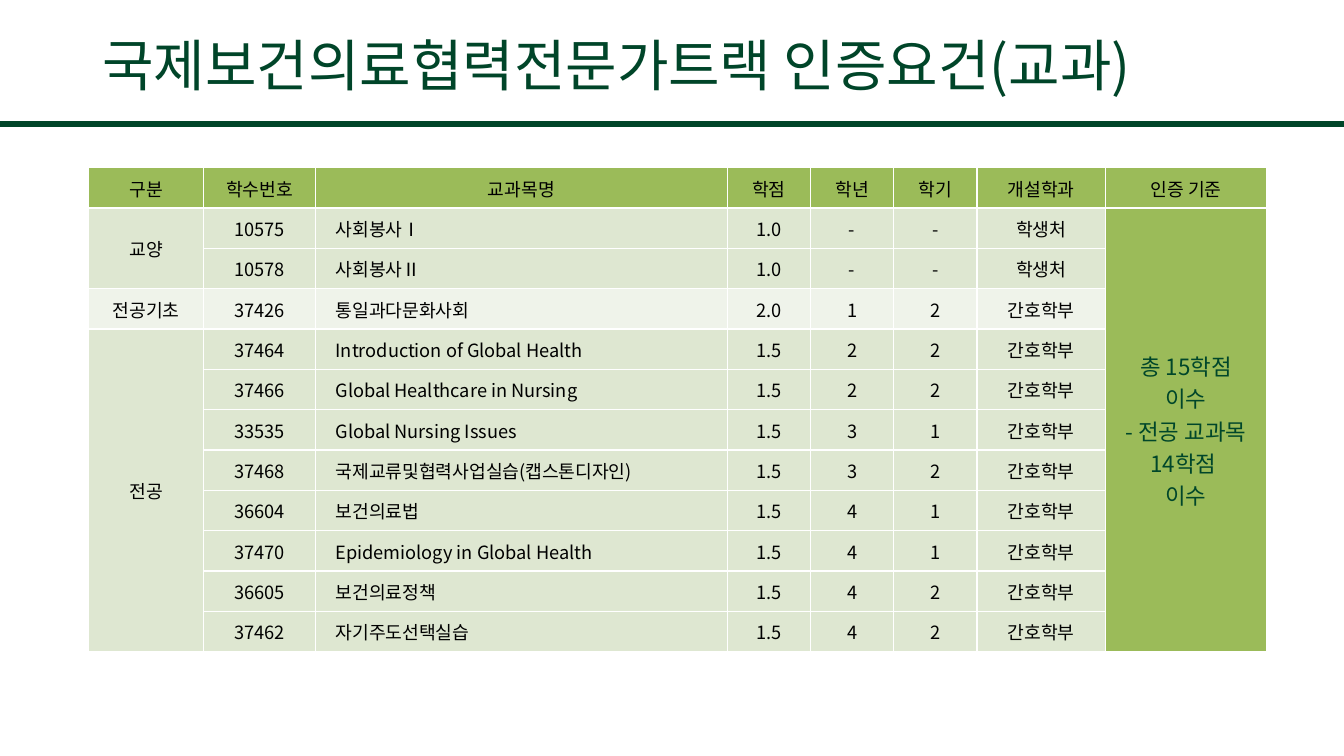
from copy import deepcopy

from lxml.etree import SubElement
from pptx import Presentation
from pptx.dml.color import RGBColor
from pptx.enum.shapes import MSO_CONNECTOR
from pptx.enum.text import MSO_ANCHOR, PP_ALIGN
from pptx.oxml.ns import qn
from pptx.util import Pt

FONT = "Noto Sans CJK KR"
DEEP_GREEN, HEADER_GREEN = "004529", "9BBB59"
SAGE, PALE_SAGE = "DEE7D1", "EFF3EA"

TITLE = "국제보건의료협력전문가트랙 인증요건(교과)"
HEADINGS = ["구분", "학수번호", "교과목명", "학점", "학년", "학기", "개설학과", "인증 기준"]
COLUMN_WIDTHS = [82, 80, 294, 59.5, 59.5, 59.5, 91.8, 115]
ROW_HEIGHT = 28.8
NAME_COLUMN, CRITERIA_COLUMN = 2, 7
CRITERIA = "총 15학점\n이수\n- 전공 교과목\n14학점 \v이수"
NURSING = "간호학부"
CATEGORIES = [
    ("교양", SAGE, [
        ("10575", "사회봉사Ⅰ", "1.0", "-", "-", "학생처"),
        ("10578", "사회봉사Ⅱ", "1.0", "-", "-", "학생처"),
    ]),
    ("전공기초", PALE_SAGE, [
        ("37426", "통일과다문화사회", "2.0", "1", "2", NURSING),
    ]),
    ("전공", SAGE, [
        ("37464", "Introduction of Global Health", "1.5", "2", "2", NURSING),
        ("37466", "Global Healthcare in Nursing", "1.5", "2", "2", NURSING),
        ("33535", "Global Nursing Issues", "1.5", "3", "1", NURSING),
        ("37468", "국제교류및협력사업실습(캡스톤디자인)", "1.5", "3", "2", NURSING),
        ("36604", "보건의료법", "1.5", "4", "1", NURSING),
        ("37470", "Epidemiology in Global Health", "1.5", "4", "1", NURSING),
        ("36605", "보건의료정책", "1.5", "4", "2", NURSING),
        ("37462", "자기주도선택실습", "1.5", "4", "2", NURSING),
    ]),
]


def rgb(value):
    return RGBColor.from_string(value)


def apply_format(target, values):
    for name, value in values.items():
        setattr(target, name, value)


def write_text(frame, text, size, color, alignment):
    frame.text = text
    for paragraph in frame.paragraphs:
        paragraph.alignment = alignment
        for run in paragraph.runs:
            apply_format(run.font, {"name": FONT, "size": Pt(size)})
            run.font.color.rgb = rgb(color)
            properties = run._r.get_or_add_rPr()
            SubElement(properties, qn("a:ea"), typeface=FONT)
            for line_break in paragraph._p.findall(qn("a:br")):
                if len(line_break) == 0:
                    line_break.append(deepcopy(properties))


def add_title(slide):
    title = slide.shapes.title
    apply_format(title, {"left": Pt(66), "top": Pt(11.5), "width": Pt(828), "height": Pt(74)})
    write_text(title.text_frame, TITLE, 40, DEEP_GREEN, PP_ALIGN.LEFT)
    apply_format(title.text_frame, {"word_wrap": True, "vertical_anchor": MSO_ANCHOR.MIDDLE})
    title.text_frame.paragraphs[0].line_spacing = 0.9


def add_title_rule(slide):
    rule = slide.shapes.add_connector(MSO_CONNECTOR.STRAIGHT, 0, Pt(88.5), Pt(960), Pt(88.5))
    rule.line.color.rgb = rgb(DEEP_GREEN)
    rule.line.width = Pt(4.5)
    SubElement(rule._element.spPr, qn("a:effectLst"))


def add_borders(cell):
    properties = cell._tc.get_or_add_tcPr()
    for side in ("lnL", "lnR", "lnT", "lnB"):
        border = SubElement(properties, qn(f"a:{side}"), w=str(Pt(1)))
        fill = SubElement(border, qn("a:solidFill"))
        SubElement(fill, qn("a:srgbClr"), val="FFFFFF")


def format_cell(cell, fill, left_margin=0.7):
    add_borders(cell)
    cell.fill.solid()
    cell.fill.fore_color.rgb = rgb(fill)
    apply_format(cell, {
        "vertical_anchor": MSO_ANCHOR.MIDDLE,
        "margin_left": Pt(left_margin),
        "margin_right": Pt(0.7),
        "margin_top": Pt(0.7),
        "margin_bottom": 0,
    })


def write_cell(cell, text, size=13, color="000000", alignment=PP_ALIGN.CENTER):
    write_text(cell.text_frame, text, size, color, alignment)


def fill_row(table, row, texts, fill, first_column=0):
    for column in range(len(COLUMN_WIDTHS)):
        is_name = row > 0 and column == NAME_COLUMN
        cell_fill = HEADER_GREEN if column == CRITERIA_COLUMN else fill
        format_cell(table.cell(row, column), cell_fill, 14.4 if is_name else 0.7)
    for column, text in enumerate(texts, first_column):
        is_name = row > 0 and column == NAME_COLUMN
        write_cell(table.cell(row, column), text,
                   alignment=PP_ALIGN.LEFT if is_name else PP_ALIGN.CENTER)


def merge_down(table, column, first, last):
    if last > first:
        table.cell(first, column).merge(table.cell(last, column))


def add_course_table(slide):
    row_count = 1 + sum(len(courses) for _, _, courses in CATEGORIES)
    table = slide.shapes.add_table(
        row_count, len(COLUMN_WIDTHS), Pt(63.4), Pt(119.8),
        Pt(sum(COLUMN_WIDTHS)), Pt(ROW_HEIGHT * row_count)).table
    apply_format(table, {"first_row": True, "horz_banding": False})
    for column, width in zip(table.columns, COLUMN_WIDTHS):
        column.width = Pt(width)
    for row in table.rows:
        row.height = Pt(ROW_HEIGHT)

    fill_row(table, 0, HEADINGS, HEADER_GREEN)
    first = 1
    for category, fill, courses in CATEGORIES:
        for row, course in enumerate(courses, first):
            fill_row(table, row, course, fill, first_column=1)
        write_cell(table.cell(first, 0), category)
        merge_down(table, 0, first, first + len(courses) - 1)
        first += len(courses)
    write_cell(table.cell(1, CRITERIA_COLUMN), CRITERIA, 16, "00462A")
    merge_down(table, CRITERIA_COLUMN, 1, row_count - 1)


def main():
    presentation = Presentation()
    apply_format(presentation, {"slide_width": Pt(960), "slide_height": Pt(540)})
    slide = presentation.slides.add_slide(presentation.slide_layouts[5])
    add_title_rule(slide)
    add_title(slide)
    add_course_table(slide)
    presentation.save("out.pptx")


if __name__ == "__main__":
    main()
